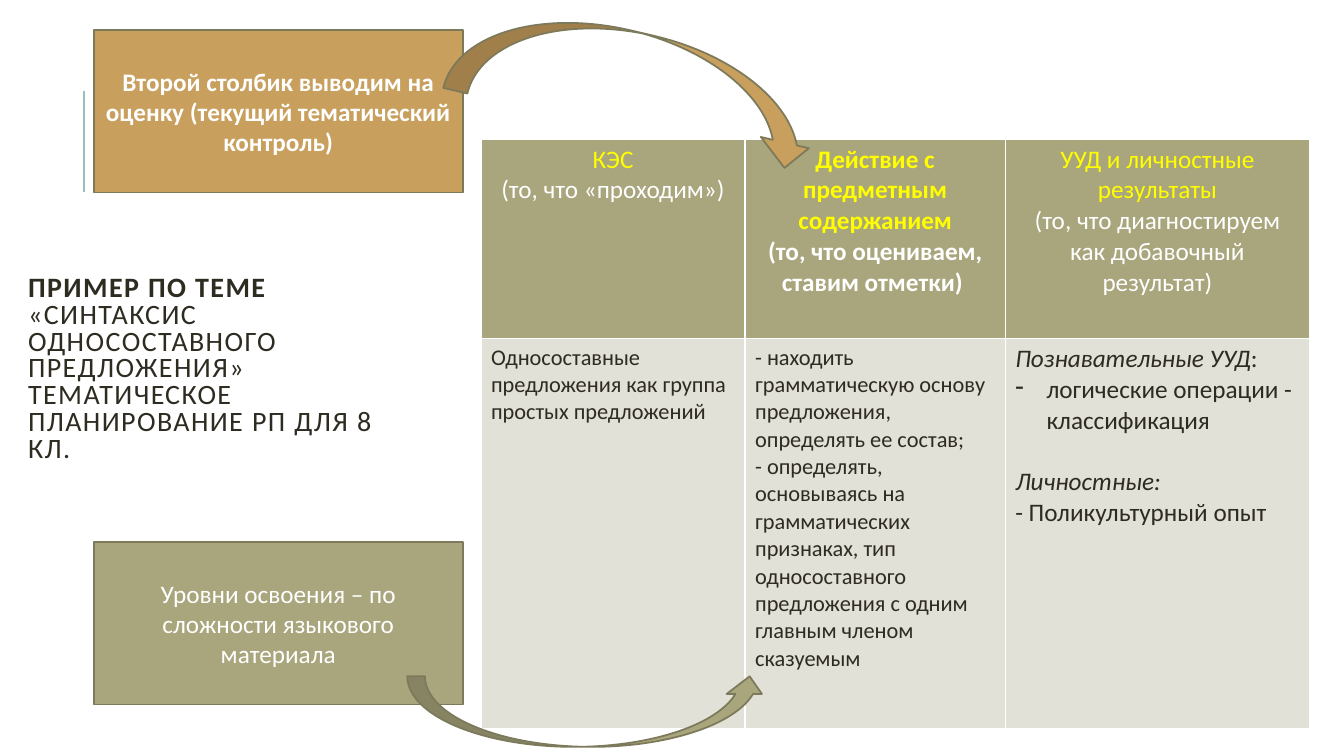
from lxml import etree
from pptx import Presentation
from pptx import util as u
from pptx.dml.color import RGBColor
from pptx.enum import shapes, text
from pptx.oxml import ns

SCALE = 9144
FONT = "Calibri"
WHITE, YELLOW, DARK = "FFFFFF", "FFFF00", "2E2B21"
OLIVE, OCHRE, PALE, OUTLINE, RULE = "A9A57C", "C89F5D", "E2E1D7", "7D7A5C", "9CBEBD"


def px(length):
    return u.Emu(length * SCALE)


def place(box):
    return [px(length) for length in box]


def color(value):
    return RGBColor.from_string(value)


def child(parent, tag, **attributes):
    return etree.SubElement(parent, ns.qn(tag), attributes)


def add_text(para, content, size=18, ink=DARK, bold=False, italic=False, tracking=0):
    for index, line in enumerate(content.split("\n")):
        if index:
            para.add_line_break()
        span = para.add_run()
        span.text = line
        span.font.name = FONT
        span.font.size = u.Pt(size)
        span.font.bold = bold
        span.font.italic = italic
        span.font.color.rgb = color(ink)
        if tracking:
            span.font._element.set("spc", str(tracking * 100))


def add_para(frame, align=text.PP_ALIGN.LEFT, before=0, spacing=None, hang=0):
    para = frame.paragraphs[0]
    if para.runs:
        para = frame.add_paragraph()
    para.alignment = align
    if before:
        para.space_before = u.Pt(before)
    if spacing:
        para.line_spacing = spacing
    if hang:
        properties = para._p.get_or_add_pPr()
        properties.set("marL", str(px(hang)))
        properties.set("indent", str(-px(hang)))
        child(properties, "a:buChar", char="-")
    return para


def add_figure(page, kind, box, fill, turn=0):
    figure = page.shapes.add_shape(kind, *place(box))
    figure.shadow.inherit = False
    figure.rotation = turn
    figure.fill.solid()
    figure.fill.fore_color.rgb = color(fill)
    figure.line.color.rgb = color(OUTLINE)
    figure.line.width = u.Pt(1.25)
    return figure


def add_note(page, box, fill, content, bold=False):
    note = add_figure(page, shapes.MSO_SHAPE.RECTANGLE, box, fill)
    frame = note.text_frame
    frame.word_wrap = True
    frame.vertical_anchor = text.MSO_ANCHOR.MIDDLE
    add_text(add_para(frame, text.PP_ALIGN.CENTER), content, ink=WHITE, bold=bold)


def add_title(page, box):
    frame = page.shapes.add_textbox(*place(box)).text_frame
    frame.word_wrap = True
    frame.vertical_anchor = text.MSO_ANCHOR.MIDDLE
    para = add_para(frame, spacing=0.8)
    add_text(para, "ПРИМЕР ПО ТЕМЕ \n", size=20, bold=True, tracking=1)
    add_text(para, "«СИНТАКСИС ОДНОСОСТАВНОГО ПРЕДЛОЖЕНИЯ»\n"
                   "ТЕМАТИЧЕСКОЕ ПЛАНИРОВАНИЕ РП ДЛЯ 8 КЛ.", size=20, tracking=1)


def add_rule(page, x, top, bottom):
    rule = page.shapes.add_connector(shapes.MSO_CONNECTOR.STRAIGHT, *place((x, bottom, x, top)))
    rule.line.color.rgb = color(RULE)
    rule.line.width = u.Pt(1.5)
    child(rule._element.spPr, "a:effectLst")


def style_cell(cell, fill):
    properties = cell._tc.get_or_add_tcPr()
    for side in "LRTB":
        border = child(properties, f"a:ln{side}", w=str(u.Pt(1)))
        child(child(border, "a:solidFill"), "a:srgbClr", val=WHITE)
    cell.fill.solid()
    cell.fill.fore_color.rgb = color(fill)


def add_plan(page, box, widths, heights):
    table = page.shapes.add_table(len(heights), len(widths), *place(box)).table
    table.first_row = table.horz_banding = False
    for column, width in zip(table.columns, widths):
        column.width = px(width)
    for row, height, fill in zip(table.rows, heights, (OLIVE, PALE)):
        row.height = px(height)
        for cell in row.cells:
            style_cell(cell, fill)

    headings = (
        ("КЭС", "(то, что «проходим»)", False),
        ("Действие с предметным содержанием", "(то, что оцениваем, ставим отметки) ", True),
        ("УУД и личностные результаты", "(то, что диагностируем как добавочный результат)", False),
    )
    for column, (name, meaning, bold) in enumerate(headings):
        frame = table.cell(0, column).text_frame
        for content, ink in ((name, YELLOW), (meaning, WHITE)):
            add_text(add_para(frame, text.PP_ALIGN.CENTER), content, ink=ink, bold=bold)

    topics = (
        ["Односоставные предложения как группа простых предложений"],
        ["- находить грамматическую основу предложения, определять ее состав;",
         "- определять, основываясь на грамматических признаках, тип "
         "односоставного предложения с одним главным членом сказуемым"],
    )
    for column, lines in enumerate(topics):
        for line in lines:
            add_text(add_para(table.cell(1, column).text_frame), line, size=16)

    results = table.cell(1, 2).text_frame
    para = add_para(results)
    add_text(para, "Познавательные УУД", italic=True)
    add_text(para, ":")
    add_text(add_para(results, hang=31), "логические операции - классификация")
    add_text(add_para(results, before=22), "Личностные:", italic=True)
    add_text(add_para(results), "- Поликультурный опыт")


def main():
    deck = Presentation()
    deck.slide_width, deck.slide_height = px(1333), px(750)
    page = deck.slides.add_slide(deck.slide_layouts[6])
    add_rule(page, 83, 90, 190)
    add_title(page, (18, 254, 399, 226))
    add_plan(page, (477, 138, 822, 585), (262, 258, 302), (198, 387))
    add_note(page, (93, 30, 366, 161), OCHRE,
             "Второй столбик выводим на оценку (текущий тематический контроль)", bold=True)
    add_figure(page, shapes.MSO_SHAPE.CURVED_DOWN_ARROW, (446, 33, 372, 98), OCHRE, turn=13.2)
    add_note(page, (93, 538, 366, 161), OLIVE,
             "Уровни освоения – по сложности языкового материала")
    add_figure(page, shapes.MSO_SHAPE.CURVED_UP_ARROW, (404, 671, 357, 70), OLIVE)
    deck.save("out.pptx")


if __name__ == "__main__":
    main()
